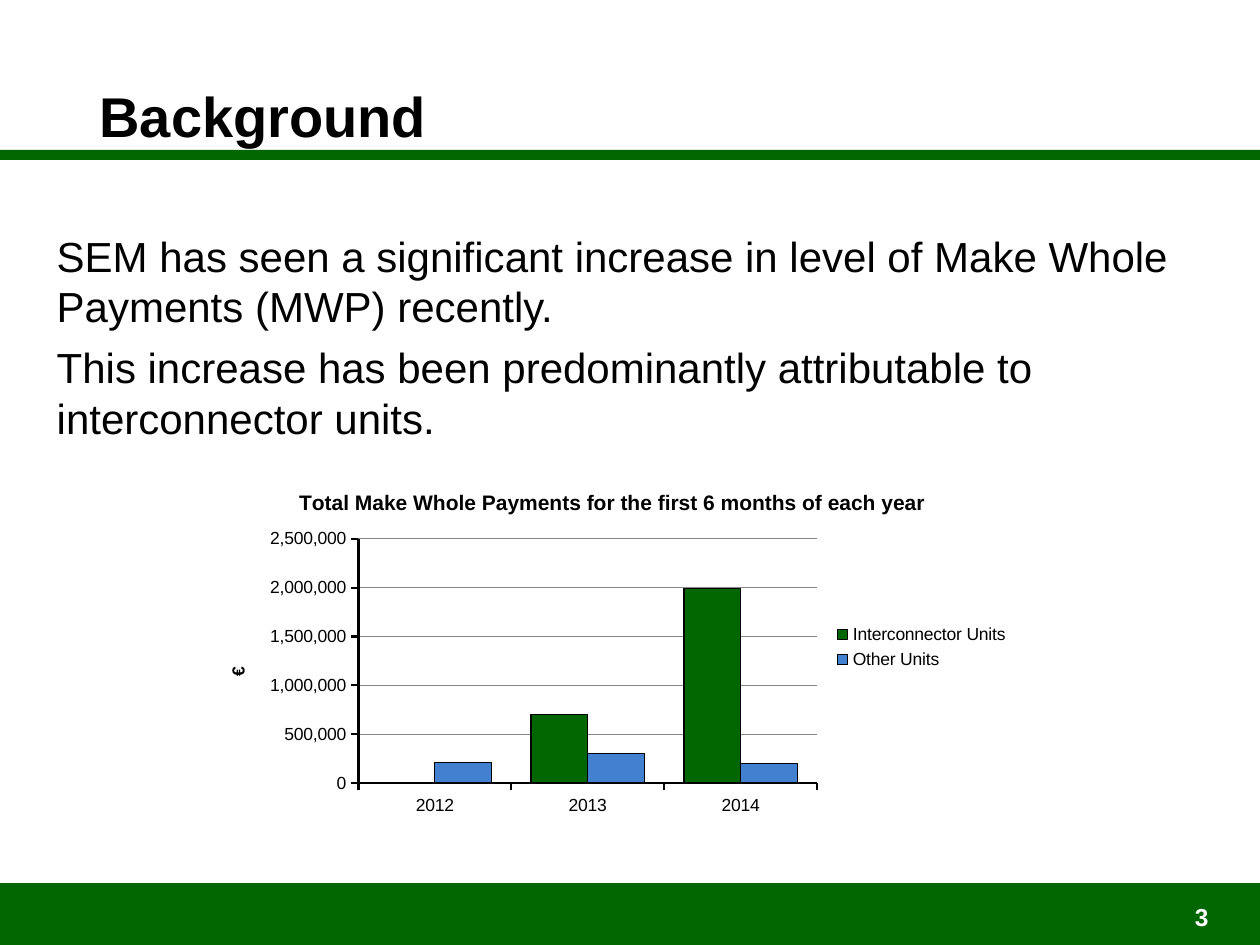
from dataclasses import dataclass

from lxml import etree
from pptx import Presentation
from pptx.chart.data import CategoryChartData
from pptx.dml.color import RGBColor
from pptx.enum.chart import XL_CHART_TYPE as ChartType, XL_LEGEND_POSITION as LegendPos
from pptx.enum.chart import XL_TICK_MARK as Tick
from pptx.enum.shapes import MSO_SHAPE as Shape
from pptx.enum.text import MSO_ANCHOR as Anchor, MSO_AUTO_SIZE as AutoSize, PP_ALIGN as Align
from pptx.oxml.ns import qn
from pptx.util import Inches, Pt


@dataclass(frozen=True)
class Theme:
    font: str = "Arial"
    text: str = "000000"
    light: str = "FFFFFF"
    green: str = "006600"
    blue: str = "4181D0"
    grid: str = "878787"
    title: int = 32
    body: int = 24
    number: int = 14
    chart_title: int = 12
    chart: int = 10


THEME = Theme()


def style_font(font, size, color=THEME.text, bold=False):
    font.name = THEME.font
    font.size = Pt(size)
    font.bold = bold
    font.color.rgb = RGBColor.from_string(color)


def write(tf, *lines, size, color=THEME.text, bold=False, align=Align.LEFT, after=0):
    for i, line in enumerate(lines):
        p = tf.paragraphs[0] if i == 0 else tf.add_paragraph()
        p.alignment = align
        p.space_before = Pt(0)
        p.space_after = Pt(after)
        r = p.add_run()
        r.text = line
        style_font(r.font, size, color, bold)


def style_line(line, color, width):
    line.color.rgb = RGBColor.from_string(color)
    line.width = Pt(width)


class Deck:
    def __init__(self, prs, theme):
        self.theme = theme
        self.slide = prs.slides.add_slide(prs.slide_layouts[1])

    def place(self, sp, x, y, w, h):
        sp.left, sp.top, sp.width, sp.height = map(Inches, (x, y, w, h))
        sp.text_frame.word_wrap = True
        sp.text_frame.auto_size = AutoSize.NONE
        return sp.text_frame

    def bar(self, y, h):
        sp = self.slide.shapes.add_shape(Shape.RECTANGLE, 0, Inches(y), Inches(10), Inches(h))
        sp.shadow.inherit = False
        sp.fill.solid()
        sp.fill.fore_color.rgb = RGBColor.from_string(self.theme.green)
        sp.line.fill.background()

    def title(self, text, *box):
        tf = self.place(self.slide.shapes.title, *box)
        tf.vertical_anchor = Anchor.MIDDLE
        write(tf, text, size=self.theme.title, bold=True)

    def body(self, lines, *box):
        tf = self.place(self.slide.placeholders[1], *box)
        tf.margin_top = Inches(0.52)
        write(tf, *lines, size=self.theme.body, after=6)
        for p in tf.paragraphs:
            pPr = p._p.get_or_add_pPr()
            pPr.set("marL", "0")
            pPr.set("indent", "0")
            etree.SubElement(pPr, qn("a:buNone"))

    def number(self, text, *box):
        tf = self.place(self.slide.shapes.add_textbox(0, 0, 0, 0), *box)
        write(tf, text, size=self.theme.number, color=self.theme.light, bold=True, align=Align.RIGHT)

    def chart(self, title, unit, cats, series, *box):
        t = self.theme
        data = CategoryChartData(number_format="#,##0")
        data.categories = cats
        for name, values, _ in series:
            data.add_series(name, values)
        frame = self.slide.shapes.add_chart(ChartType.COLUMN_CLUSTERED, *map(Inches, box), data)
        chart = frame.chart
        style_font(chart.font, t.chart)
        chart.has_title = True
        write(chart.chart_title.text_frame, title, size=t.chart_title, bold=True, align=Align.CENTER)
        chart.has_legend = True
        chart.legend.position = LegendPos.RIGHT
        chart.legend.include_in_layout = False

        plot = chart.plots[0]
        plot.gap_width = 70
        plot.overlap = 0
        plot.vary_by_categories = False
        for s, (_, _, color) in zip(plot.series, series):
            s.format.fill.solid()
            s.format.fill.fore_color.rgb = RGBColor.from_string(color)
            style_line(s.format.line, t.text, 0.75)

        for axis in (chart.category_axis, chart.value_axis):
            axis.major_tick_mark = Tick.OUTSIDE
            axis.minor_tick_mark = Tick.NONE
            style_line(axis.format.line, t.text, 1.25)
        axis = chart.value_axis
        axis.minimum_scale, axis.maximum_scale, axis.major_unit = 0, 2500000, 500000
        axis.tick_labels.number_format = "#,##0"
        axis.tick_labels.number_format_is_linked = False
        axis.has_major_gridlines = True
        style_line(axis.major_gridlines.format.line, t.grid, 0.75)
        axis.has_title = True
        write(axis.axis_title.text_frame, unit, size=t.chart, bold=True, align=Align.CENTER)
        self.plot_layout(chart, x=0.19, y=0.19, w=0.56, h=0.7)

    def plot_layout(self, chart, **fractions):
        area = chart._chartSpace.chart.plotArea
        for old in area.findall(qn("c:layout")):
            area.remove(old)
        layout = etree.Element(qn("c:layout"))
        area.insert(0, layout)
        manual = etree.SubElement(layout, qn("c:manualLayout"))
        settings = {"layoutTarget": "inner", "xMode": "edge", "yMode": "edge", **fractions}
        for tag, value in settings.items():
            etree.SubElement(manual, qn(f"c:{tag}")).set("val", str(value))


def main():
    prs = Presentation()
    prs.slide_width, prs.slide_height = Inches(10), Inches(7.5)
    deck = Deck(prs, THEME)
    deck.bar(7.01, 0.49)
    deck.bar(1.19, 0.08)
    deck.title("Background", 0.69, 0.6, 7.11, 0.62)
    deck.body(
        (
            "SEM has seen a significant increase in level of Make Whole Payments (MWP) recently.",
            "This increase has been predominantly attributable to interconnector units.",
        ),
        0.35, 1.31, 9.65, 5.67,
    )
    deck.number("3", 7.36, 7.11, 2.33, 0.52)
    deck.chart(
        "Total Make Whole Payments for the first 6 months of each year",
        "€",
        ("2012", "2013", "2014"),
        (
            ("Interconnector Units", (0, 700000, 1990000), THEME.green),
            ("Other Units", (210000, 300000, 200000), THEME.blue),
        ),
        1.61, 3.75, 6.5, 2.77,
    )
    prs.save("out.pptx")


if __name__ == "__main__":
    main()
